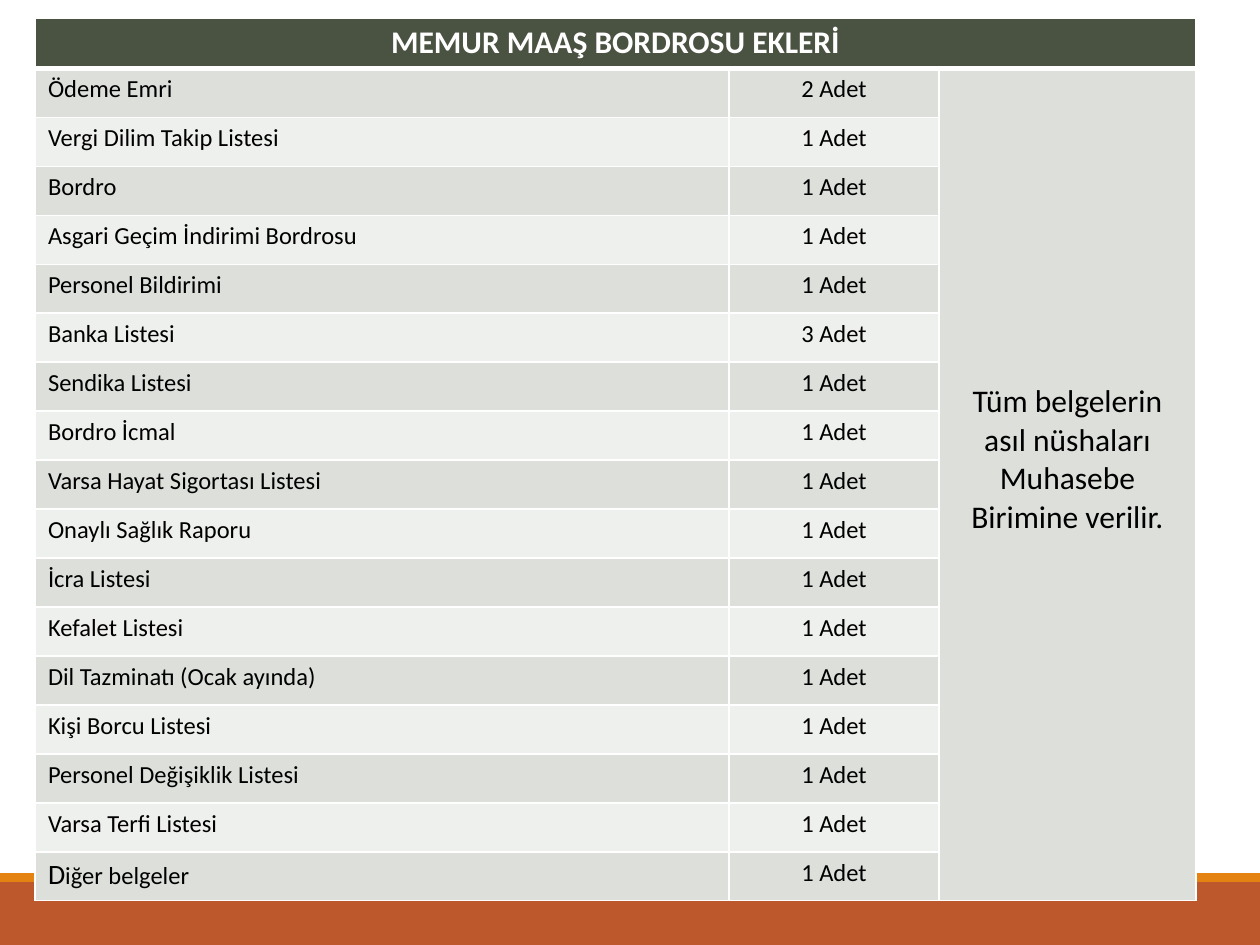
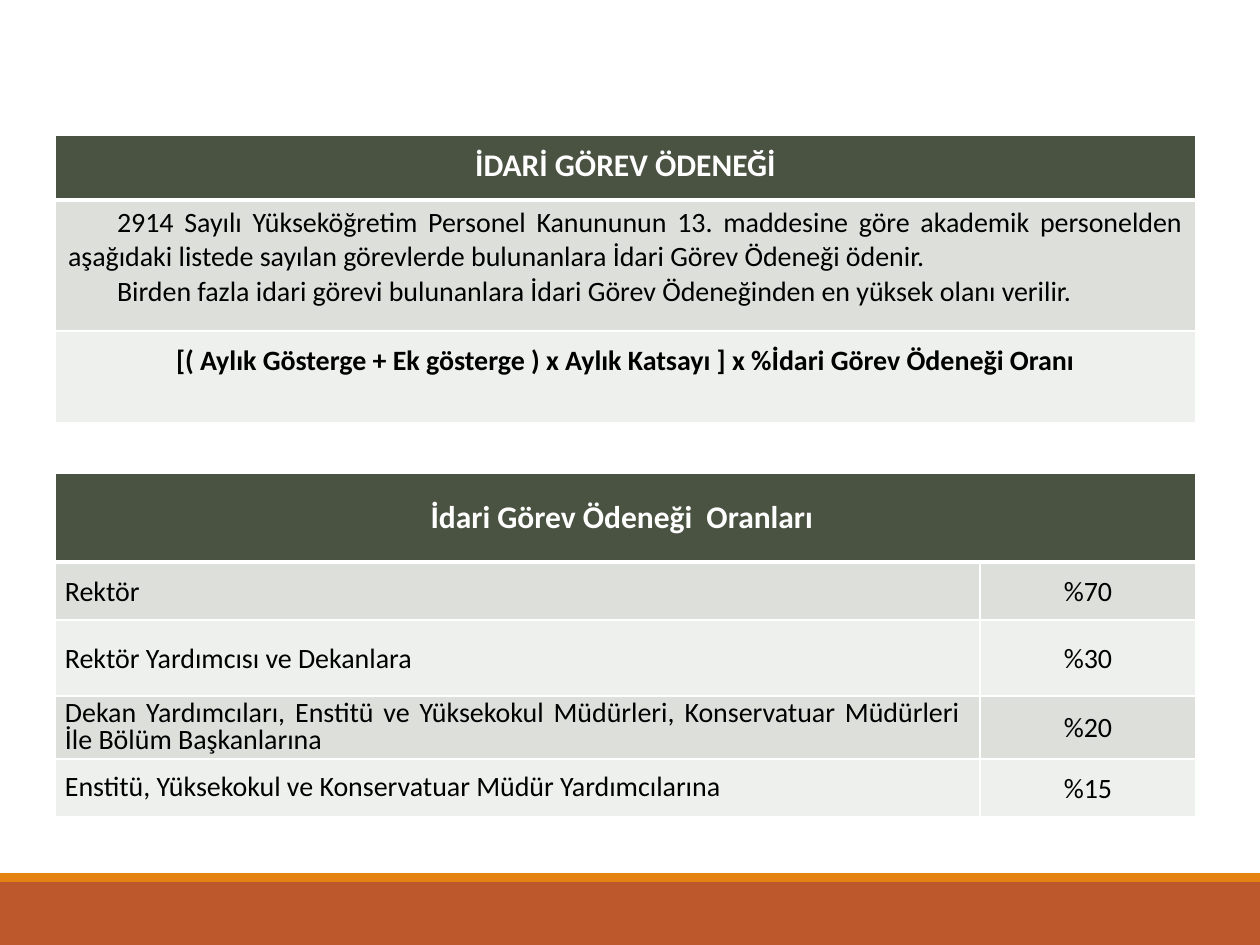
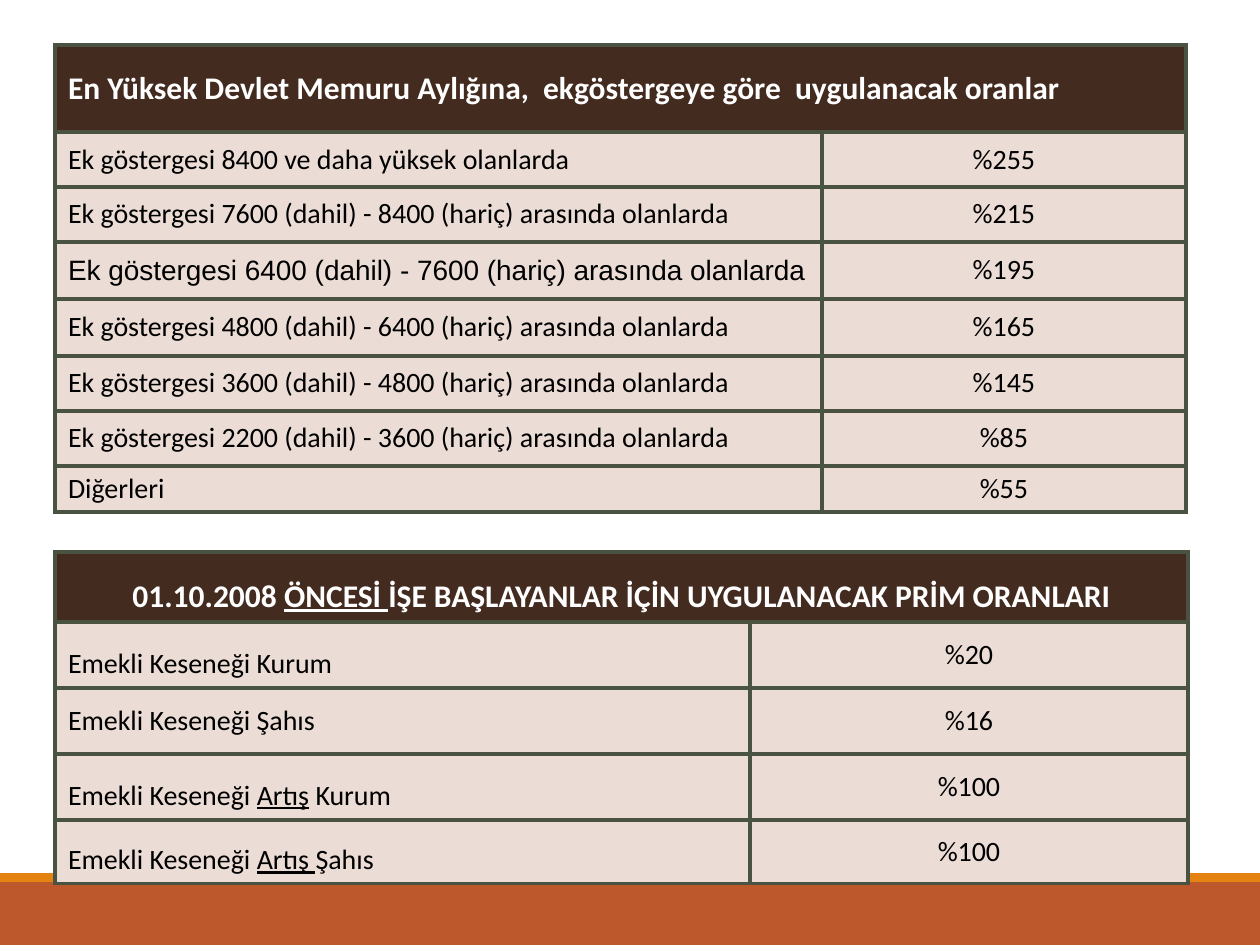
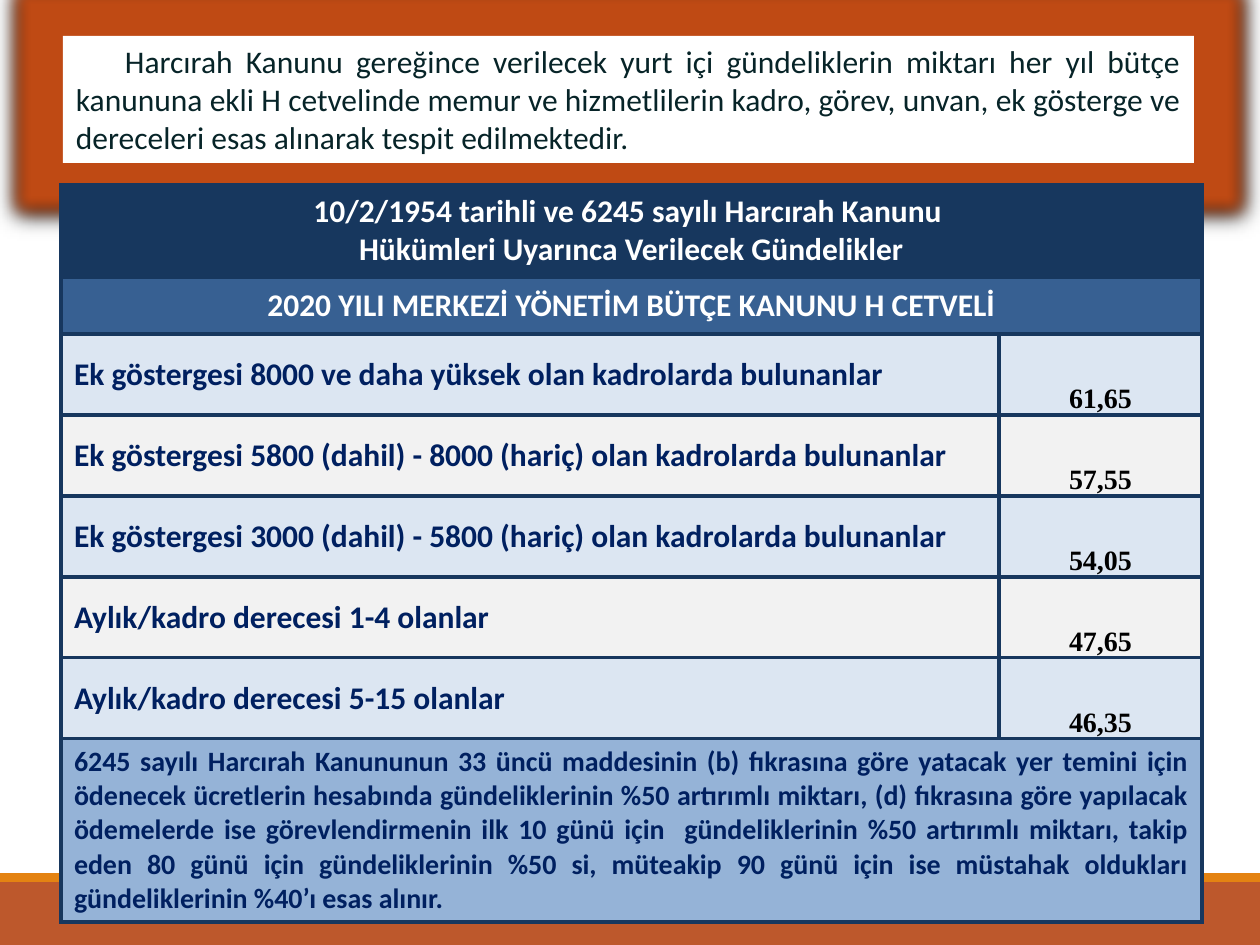
from dataclasses import dataclass, replace
from typing import Optional

from lxml import etree
from pptx import Presentation
from pptx import util as u
from pptx.dml.color import RGBColor
from pptx.enum import shapes, text
from pptx.oxml.ns import qn

PX_PER_INCH = 126
SLIDE_W, SLIDE_H = 1260, 945

# Colours
WHITE = RGBColor(0xFF, 0xFF, 0xFF)
BLACK = RGBColor(0, 0, 0)
RUST = RGBColor(0xBD, 0x58, 0x2C)
ORANGE = RGBColor(0xE4, 0x83, 0x12)
GLOW = RGBColor(0xBF, 0x4A, 0x14)
OLIVE = RGBColor(0x4A, 0x52, 0x42)
SAGE = RGBColor(0xDC, 0xDF, 0xDA)
SAGE_PALE = RGBColor(0xEE, 0xF0, 0xED)
BROWN = RGBColor(0x43, 0x2B, 0x20)
BEIGE = RGBColor(0xEB, 0xDC, 0xD5)
NAVY = RGBColor(0x17, 0x37, 0x5E)
BLUE = RGBColor(0x37, 0x60, 0x92)
BLUE_MID = RGBColor(0x95, 0xB3, 0xD7)
BLUE_PALE = RGBColor(0xDC, 0xE6, 0xF2)
GREY_PALE = RGBColor(0xF2, 0xF2, 0xF2)
INK_BLUE = RGBColor(0x00, 0x20, 0x60)
INK_TEAL = RGBColor(0x07, 0x24, 0x28)

LEFT, CENTER, JUSTIFY = (text.PP_ALIGN.LEFT, text.PP_ALIGN.CENTER,
                         text.PP_ALIGN.JUSTIFY)
TOP, MIDDLE, BOTTOM = (text.MSO_ANCHOR.TOP, text.MSO_ANCHOR.MIDDLE,
                       text.MSO_ANCHOR.BOTTOM)


def px(n: float) -> u.Emu:
    return u.Emu(round(n * 914400 / PX_PER_INCH))


@dataclass(frozen=True)
class Style:
    size: int = 16
    color: RGBColor = BLACK
    bold: bool = False
    font: str = "Calibri"
    align: int = LEFT
    anchor: int = MIDDLE
    insets: tuple[int, int, int, int] = (13, 6, 13, 6)
    spacing: Optional[float] = None
    indent: int = 0


@dataclass(frozen=True)
class Cell:
    text: str
    style: Style
    down: int = 1


@dataclass(frozen=True)
class Row:
    height: int
    fill: RGBColor
    cells: list[Cell]


@dataclass(frozen=True)
class Grid:
    """A table; a row with a single cell spans all the columns."""
    left: int
    top: int
    cols: list[int]
    rows: list[Row]
    line: RGBColor
    weight: float
    head_weight: float


# Shared text styles
HEAD = Style(18, WHITE, True, align=CENTER)
BODY = Style()
VALUE = Style(align=CENTER)


def write(tf, content: str, style: Style) -> None:
    """One paragraph per line; \\v breaks a line, _..._ underlines."""
    tf.word_wrap = True
    for i, line in enumerate(content.split("\n")):
        p = tf.paragraphs[0] if i == 0 else tf.add_paragraph()
        p.alignment = style.align
        if style.spacing:
            p.line_spacing = style.spacing
        if style.indent:
            p._p.get_or_add_pPr().set("indent", str(px(style.indent)))
        f = p.font
        f.name, f.size, f.bold = style.font, u.Pt(style.size), style.bold
        f.color.rgb = style.color
        for j, part in enumerate(line.split("_")):
            for k, piece in enumerate(part.split("\v")):
                if k:
                    p.add_line_break()
                r = p.add_run()
                r.text = piece
                if j % 2:
                    r.font.underline = True


def set_border(cell, side: int, color: RGBColor, weight: float) -> None:
    """Sides run 0 to 3: left, right, top, bottom."""
    ln = etree.Element(qn("a:ln" + "LRTB"[side]), w=str(u.Pt(weight)))
    fill = etree.SubElement(ln, qn("a:solidFill"))
    etree.SubElement(fill, qn("a:srgbClr"), val=str(color))
    cell._tc.get_or_add_tcPr().insert(side, ln)


def fill_cell(cell, content: Cell, fill: RGBColor) -> None:
    style = content.style
    cell.fill.solid()
    cell.fill.fore_color.rgb = fill
    cell.vertical_anchor = style.anchor
    (cell.margin_left, cell.margin_top,
     cell.margin_right, cell.margin_bottom) = map(px, style.insets)
    write(cell.text_frame, content.text, style)


def draw_grid(s, grid: Grid):
    n_rows, n_cols = len(grid.rows), len(grid.cols)
    frame = s.shapes.add_table(
        n_rows, n_cols, px(grid.left), px(grid.top), px(sum(grid.cols)),
        px(sum(row.height for row in grid.rows)))
    table = frame.table
    table.horz_banding = False
    for col, width in zip(table.columns, grid.cols):
        col.width = px(width)
    for i, row in enumerate(grid.rows):
        table.rows[i].height = px(row.height)
        for j in range(n_cols):
            for side in range(4):
                under_head = (i, side) in ((0, 3), (1, 2))
                set_border(table.cell(i, j), side, grid.line,
                           grid.head_weight if under_head else grid.weight)
        for j, content in enumerate(row.cells):
            cell = table.cell(i, j)
            fill_cell(cell, content, row.fill)
            last_col = n_cols - 1 if len(row.cells) == 1 else j
            if last_col > j or content.down > 1:
                cell.merge(table.cell(i + content.down - 1, last_col))
    return table


def add_box(s, left: int, top: int, width: int, height: int, fill: RGBColor):
    sp = s.shapes.add_shape(shapes.MSO_SHAPE.RECTANGLE, px(left), px(top),
                            px(width), px(height))
    sp.shadow.inherit = False
    sp.fill.solid()
    sp.fill.fore_color.rgb = fill
    sp.line.fill.background()
    return sp


def add_glow(sp) -> None:
    effects = sp._element.spPr.find(qn("a:effectLst"))
    glow = etree.SubElement(effects, qn("a:glow"), rad=str(u.Pt(18)))
    etree.SubElement(glow, qn("a:srgbClr"), val=str(GLOW))
    shadow = etree.SubElement(effects, qn("a:outerShdw"), dir="5400000",
                              blurRad=str(u.Pt(8.5)), dist=str(u.Pt(1)))
    etree.SubElement(shadow, qn("a:srgbClr"), val=str(BLACK))


def new_slide(prs):
    """A blank slide with the two bands along the bottom."""
    s = prs.slides.add_slide(prs.slide_layouts[6])
    add_box(s, 0, 882, SLIDE_W, 63, RUST)
    add_box(s, 0, 873, SLIDE_W, 9, ORANGE)
    return s


def band(i: int, first: RGBColor, second: RGBColor) -> RGBColor:
    return second if i % 2 else first


def payroll_slide(prs) -> None:
    documents = [
        "Ödeme Emri", "Vergi Dilim Takip Listesi", "Bordro",
        "Asgari Geçim İndirimi Bordrosu", "Personel Bildirimi",
        "Banka Listesi", "Sendika Listesi", "Bordro İcmal",
        "Varsa Hayat Sigortası Listesi", "Onaylı Sağlık Raporu",
        "İcra Listesi", "Kefalet Listesi", "Dil Tazminatı (Ocak ayında)",
        "Kişi Borcu Listesi", "Personel Değişiklik Listesi",
        "Varsa Terfi Listesi", "Diğer belgeler",
    ]
    copies = {"Ödeme Emri": 2, "Banka Listesi": 3}
    name = Style(14, anchor=TOP)
    count = replace(name, align=CENTER)
    note = Style(18, align=CENTER, insets=(13, 6, 13, 56))
    rows = [Row(49, OLIVE, [Cell("MEMUR MAAŞ BORDROSU EKLERİ",
                                 replace(HEAD, anchor=TOP))])]
    for i, document in enumerate(documents):
        cells = [Cell(document, name),
                 Cell(f"{copies.get(document, 1)} Adet", count)]
        if i == 0:
            cells.append(Cell("Tüm belgelerin asıl nüshaları Muhasebe "
                              "Birimine verilir.", note, len(documents)))
        rows.append(Row(49, band(i, SAGE, SAGE_PALE), cells))
    table = draw_grid(new_slide(prs),
                      Grid(35, 18, [694, 210, 257], rows, WHITE, 1, 3))

    # Larger first letter in the last row
    p = table.cell(len(documents), 0).text_frame.paragraphs[0]
    r = p.runs[0]
    r.text, r.font.size = "D", u.Pt(16)
    p.add_run().text = "iğer belgeler"


def allowance_slide(prs) -> None:
    s = new_slide(prs)

    # Rule and formula
    rule = Style(align=JUSTIFY, anchor=TOP, indent=49)
    formula = Style(bold=True, align=CENTER, insets=(13, 6, 13, 38))
    draw_grid(s, Grid(55, 135, [1141], [
        Row(65, OLIVE, [Cell("İDARİ GÖREV ÖDENEĞİ",
                             replace(HEAD, anchor=TOP, spacing=1.15))]),
        Row(131, SAGE, [Cell(
            "2914 Sayılı Yükseköğretim Personel Kanununun 13. maddesine göre "
            "akademik personelden aşağıdaki listede sayılan görevlerde "
            "bulunanlara İdari Görev Ödeneği ödenir.\n"
            "Birden fazla idari görevi bulunanlara İdari Görev Ödeneğinden "
            "en yüksek olanı verilir.", rule)]),
        Row(92, SAGE_PALE, [Cell(
            "[( Aylık Gösterge + Ek gösterge ) x Aylık Katsayı ] x "
            "%İdari Görev Ödeneği Oranı", formula)]),
    ], WHITE, 1, 3))

    # Rates by duty
    duty = Style(insets=(10, 1, 10, 0))
    tight = replace(duty, align=JUSTIFY, spacing=0.8)
    rate = replace(VALUE, insets=(1, 1, 1, 0))
    duties = [
        (58, "Rektör", duty, "%70"),
        (76, "Rektör Yardımcısı ve Dekanlara", duty, "%30"),
        (63, "Dekan Yardımcıları, Enstitü ve Yüksekokul Müdürleri, "
             "Konservatuar Müdürleri  İle Bölüm Başkanlarına", tight, "%20"),
        (58, "Enstitü, Yüksekokul ve Konservatuar Müdür Yardımcılarına",
         tight, "%15"),
    ]
    rows = [Row(89, OLIVE, [Cell("İdari Görev Ödeneği  Oranları ", HEAD)])]
    rows += [Row(height, band(i, SAGE, SAGE_PALE),
                 [Cell(label, style), Cell(percent, rate)])
             for i, (height, label, style, percent) in enumerate(duties)]
    draw_grid(s, Grid(55, 473, [925, 216], rows, WHITE, 1, 3))


def premium_slide(prs) -> None:
    s = new_slide(prs)

    # Rates by additional indicator
    between = "Ek göstergesi {} (dahil) - {} (hariç) arasında olanlarda"
    limits = [8400, 7600, 6400, 4800, 3600, 2200]
    labels = ["Ek göstergesi 8400 ve daha yüksek olanlarda"]
    labels += [between.format(low, high)
               for high, low in zip(limits, limits[1:])]
    labels.append("Diğerleri")
    heights = [55, 55, 57, 57, 55, 55, 45]
    rates = [255, 215, 195, 165, 145, 85, 55]
    rows = [Row(87, BROWN, [Cell(
        "En Yüksek Devlet Memuru Aylığına,  ekgöstergeye göre  "
        "uygulanacak oranlar", replace(HEAD, align=LEFT))])]
    for height, label, rate in zip(heights, labels, rates):
        style = replace(BODY, font="Arial") if rate == 195 else BODY
        rows.append(Row(height, BEIGE,
                        [Cell(label, style), Cell(f"%{rate}", VALUE)]))
    draw_grid(s, Grid(55, 45, [767, 364], rows, OLIVE, 2.25, 2.25))

    # Pension premiums
    airy = replace(BODY, spacing=1.5)
    premiums = [
        (66, "Emekli Keseneği Kurum", airy, "%20"),
        (66, "Emekli Keseneği Şahıs", BODY, "%16"),
        (66, "Emekli Keseneği _Artış_ Kurum", airy, "%100"),
        (63, "Emekli Keseneği _Artış _Şahıs", airy, "%100"),
    ]
    rows = [Row(70, BROWN, [Cell(
        "01.10.2008 _ÖNCESİ _İŞE BAŞLAYANLAR İÇİN UYGULANACAK PRİM ORANLARI",
        replace(HEAD, anchor=TOP, spacing=1.5))])]
    rows += [Row(height, BEIGE, [Cell(label, style), Cell(percent, VALUE)])
             for height, label, style, percent in premiums]
    draw_grid(s, Grid(55, 552, [695, 438], rows, OLIVE, 2.25, 2.25))


def per_diem_slide(prs) -> None:
    s = new_slide(prs)

    # Introduction
    sp = add_box(s, 63, 36, 1131, 127, WHITE)
    add_glow(sp)
    tf = sp.text_frame
    (tf.margin_left, tf.margin_top,
     tf.margin_right, tf.margin_bottom) = map(px, BODY.insets)
    tf.vertical_anchor = TOP
    write(tf, "Harcırah Kanunu gereğince verilecek yurt içi gündeliklerin "
              "miktarı her yıl bütçe kanununa ekli H cetvelinde memur ve "
              "hizmetlilerin kadro, görev, unvan, ek gösterge ve dereceleri "
              "esas alınarak tespit edilmektedir.",
          Style(18, INK_TEAL, align=JUSTIFY, indent=49))

    # Daily amounts
    label_style = Style(18, INK_BLUE, True)
    amount_style = Style(16, bold=True, font="Times New Roman", align=CENTER,
                         anchor=BOTTOM, insets=(1, 1, 1, 0))
    amounts = [
        ("Ek göstergesi 8000 ve daha yüksek olan kadrolarda bulunanlar",
         "61,65"),
        ("Ek göstergesi 5800 (dahil) - 8000 (hariç) olan kadrolarda "
         "bulunanlar", "57,55"),
        ("Ek göstergesi 3000 (dahil) - 5800 (hariç) olan kadrolarda "
         "bulunanlar", "54,05"),
        ("Aylık/kadro derecesi 1-4 olanlar", "47,65"),
        ("Aylık/kadro derecesi 5-15 olanlar", "46,35"),
    ]
    rows = [
        Row(92, NAVY, [Cell(
            "10/2/1954 tarihli ve 6245 sayılı Harcırah Kanunu \v"
            "Hükümleri Uyarınca Verilecek Gündelikler", HEAD)]),
        Row(57, BLUE, [Cell(
            "2020 YILI MERKEZİ YÖNETİM BÜTÇE KANUNU H CETVELİ", HEAD)]),
    ]
    rows += [Row(81, band(i, BLUE_PALE, GREY_PALE),
                 [Cell(label, label_style), Cell(amount, amount_style)])
             for i, (label, amount) in enumerate(amounts)]
    rows.append(Row(179, BLUE_MID, [Cell(
        "6245 sayılı Harcırah Kanununun 33 üncü maddesinin (b) fıkrasına "
        "göre yatacak yer temini için ödenecek ücretlerin hesabında "
        "gündeliklerinin %50 artırımlı miktarı, (d) fıkrasına göre yapılacak "
        "ödemelerde ise görevlendirmenin ilk 10 günü için  gündeliklerinin "
        "%50 artırımlı miktarı, takip eden 80 günü için gündeliklerinin %50 "
        "si, müteakip 90 günü için ise müstahak oldukları gündeliklerinin "
        "%40’ı esas alınır.",
        Style(16, INK_BLUE, True, align=JUSTIFY))]))
    draw_grid(s, Grid(61, 185, [938, 203], rows, NAVY, 2.25, 2.25))


def main() -> None:
    prs = Presentation()
    prs.slide_width, prs.slide_height = px(SLIDE_W), px(SLIDE_H)
    payroll_slide(prs)
    allowance_slide(prs)
    premium_slide(prs)
    per_diem_slide(prs)
    prs.save("out.pptx")


if __name__ == "__main__":
    main()
